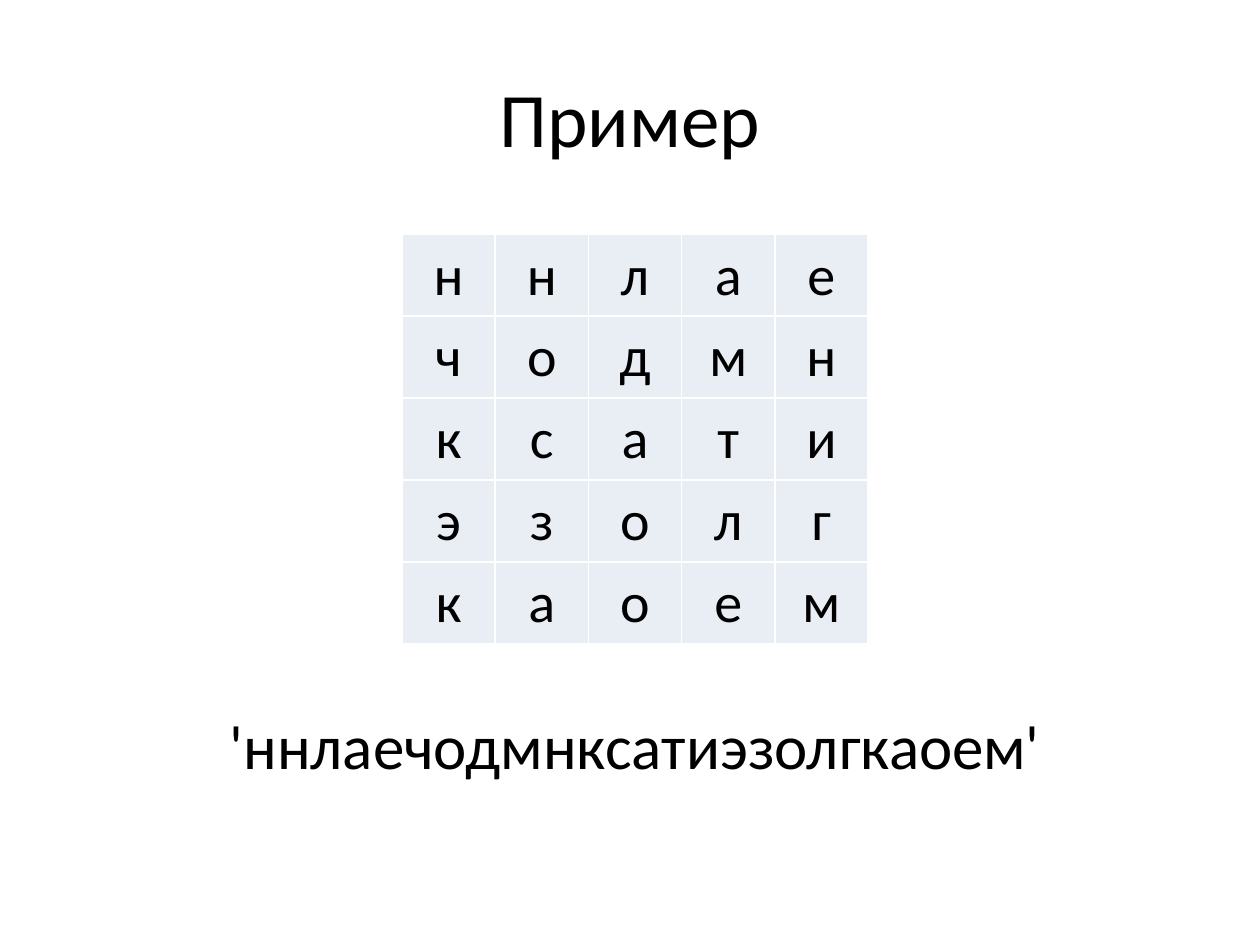
from lxml.etree import SubElement
from pptx import Presentation
from pptx.dml.color import RGBColor
from pptx.enum.text import MSO_ANCHOR, MSO_AUTO_SIZE, PP_ALIGN
from pptx.oxml.ns import qn
from pptx.util import Inches, Pt

LETTER_ROWS = ["ннлае", "чодмн", "ксати", "эзолг", "каоем"]
COLUMN_WIDTH = 0.74
ROW_HEIGHT = 0.65


def color(value):
    """Turn a hex string into a colour."""
    return RGBColor.from_string(value)


def write_text(frame, text, size):
    """Write one centred run into a text frame."""
    para = frame.paragraphs[0]
    para.alignment = PP_ALIGN.CENTER
    span = para.add_run()
    span.text = text
    span.font.name = "Calibri"
    span.font.size = Pt(size)
    span.font.color.rgb = color("000000")


def add_title(page, text):
    """Place and fill the title placeholder."""
    title = page.shapes.title
    title.left, title.top = Inches(0.5), Inches(0.3)
    title.width, title.height = Inches(9), Inches(1.25)
    title.text_frame.vertical_anchor = MSO_ANCHOR.MIDDLE
    write_text(title.text_frame, text, 44)


def set_borders(cell, line_color, width):
    """Draw the same solid line on all four sides of a cell."""
    properties = cell._tc.get_or_add_tcPr()
    for position, side in enumerate(("lnL", "lnR", "lnT", "lnB")):
        line = SubElement(properties, qn(f"a:{side}"), w=str(Pt(width)))
        fill = SubElement(line, qn("a:solidFill"))
        SubElement(fill, qn("a:srgbClr"), val=line_color)
        properties.insert(position, line)


def format_cell(cell, letter):
    """Fill one cell of the letter grid."""
    cell.fill.solid()
    cell.fill.fore_color.rgb = color("E9EDF4")
    set_borders(cell, "FFFFFF", 1)
    cell.margin_left = cell.margin_right = cell.margin_top = Inches(0.01)
    cell.margin_bottom = 0
    cell.vertical_anchor = MSO_ANCHOR.MIDDLE
    write_text(cell.text_frame, letter, 32)


def add_letter_grid(page, rows):
    """Add a table with one letter in each cell."""
    row_count, column_count = len(rows), len(rows[0])
    frame = page.shapes.add_table(
        row_count, column_count, Inches(3.19), Inches(1.86),
        Inches(COLUMN_WIDTH * column_count), Inches(ROW_HEIGHT * row_count))
    table = frame.table
    table.first_row = False
    table.horz_banding = False
    for row_index, letters in enumerate(rows):
        for column_index, letter in enumerate(letters):
            format_cell(table.cell(row_index, column_index), letter)


def add_caption(page, text):
    """Add the line of text below the grid."""
    box = page.shapes.add_textbox(
        Inches(1.38), Inches(5.56), Inches(7.32), Inches(0.71))
    box.text_frame.word_wrap = True
    box.text_frame.auto_size = MSO_AUTO_SIZE.SHAPE_TO_FIT_TEXT
    write_text(box.text_frame, text, 36)


def main():
    """Build and save the deck."""
    deck = Presentation()
    deck.slide_width, deck.slide_height = Inches(10), Inches(7.5)
    page = deck.slides.add_slide(deck.slide_layouts[5])
    add_title(page, "Пример")
    add_letter_grid(page, LETTER_ROWS)
    add_caption(page, f"'{''.join(LETTER_ROWS)}'")
    deck.save("out.pptx")


if __name__ == "__main__":
    main()
